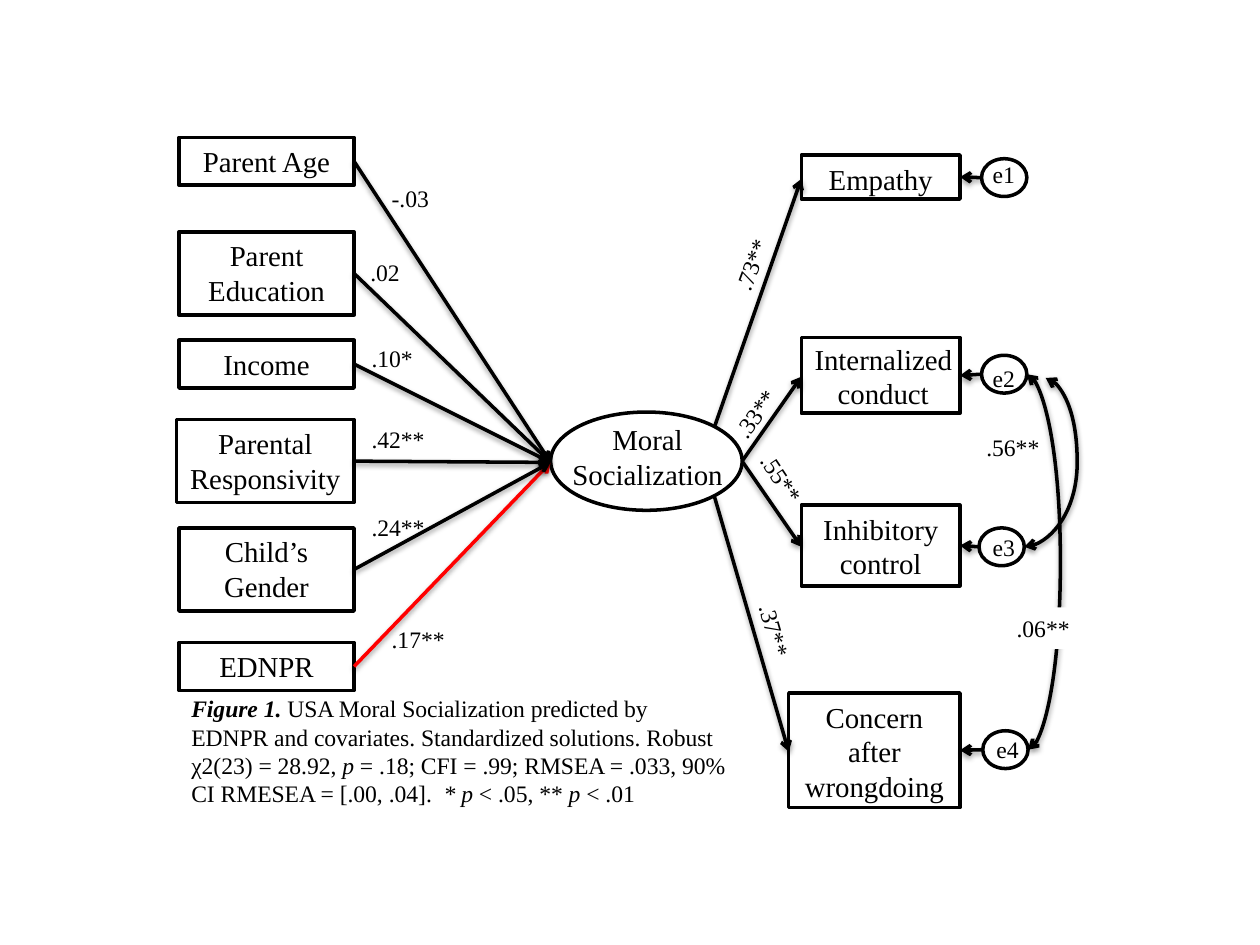
import pptx
import pptx.dml.color
import pptx.enum.shapes
import pptx.enum.text
import pptx.oxml
import pptx.oxml.ns
import pptx.util

# The slide is a grid of 100 columns by 75 rows
COLUMNS, ROWS = 100, 75
FONT = "Times New Roman"
INK, PAPER, ACCENT = "000000", "FFFFFF", "FF0000"
NODE_SIZE, LABEL_SIZE = 16.5, 13.5
LABEL_ROWS = 3.3

SHAPES = pptx.enum.shapes.MSO_SHAPE
LINES = pptx.enum.shapes.MSO_CONNECTOR
CENTER = pptx.enum.text.PP_ALIGN.CENTER
LEFT = pptx.enum.text.PP_ALIGN.LEFT

deck = pptx.Presentation()
deck.slide_width = pptx.util.Inches(10)
deck.slide_height = pptx.util.Inches(7.5)
slide = deck.slides.add_slide(deck.slide_layouts[6])


def color(hex_value):
    return pptx.dml.color.RGBColor.from_string(hex_value)


def place(*grid):
    """Turn column, row, column, row ... into slide lengths."""
    cells = deck.slide_width / COLUMNS, deck.slide_height / ROWS
    return [round(value * cells[i % 2]) for i, value in enumerate(grid)]


def write(shape, runs, align):
    """Fill a shape with (text, size, bold, italic) runs."""
    frame = shape.text_frame
    frame.word_wrap = True
    frame.auto_size = pptx.enum.text.MSO_AUTO_SIZE.SHAPE_TO_FIT_TEXT
    frame.vertical_anchor = pptx.enum.text.MSO_ANCHOR.TOP
    paragraph = frame.paragraphs[0]
    paragraph.alignment = align
    for text, size, bold, italic in runs:
        run = paragraph.add_run()
        run.text = text
        run.font.name = FONT
        run.font.size = pptx.util.Pt(size)
        run.font.bold, run.font.italic = bold, italic
        run.font.color.rgb = color(INK)


def outline(kind, box, outlined=True):
    shape = slide.shapes.add_shape(kind, *place(*box))
    shape.shadow.inherit = False
    shape.fill.solid()
    shape.fill.fore_color.rgb = color(PAPER)
    if outlined:
        shape.line.color.rgb = color(INK)
        shape.line.width = pptx.util.Pt(2)
    else:
        shape.line.fill.background()
    return shape


def words(box, text, size=LABEL_SIZE, align=LEFT):
    write(slide.shapes.add_textbox(*place(*box)), [(text, size, False, False)], align)


def patch(box, text, turn=0):
    """A coefficient on a white ground, turned along its path."""
    label = outline(SHAPES.RECTANGLE, box, outlined=False)
    label.rotation = turn
    write(label, [(text, LABEL_SIZE, False, False)], LEFT)


def arrow(start, end, hex_value=INK, bulge=None):
    """A straight arrow, or a two-headed curve reaching out to column bulge."""
    kind = LINES.STRAIGHT if bulge is None else LINES.CURVE
    path = slide.shapes.add_connector(kind, *place(*start, *end))
    path.line.color.rgb = color(hex_value)
    path.line.width = pptx.util.Pt(2)
    heads = ["tailEnd"]
    if bulge is not None:
        heads = ["headEnd", "tailEnd"]
        reach = round((bulge - start[0]) / (end[0] - start[0]) * 100000)
        guides = path._element.spPr.prstGeom.get_or_add_avLst()
        guide = pptx.oxml.parse_xml(f'<a:gd {pptx.oxml.ns.nsdecls("a")} name="adj1" fmla="val {reach}"/>')
        guides.append(guide)
    for head in heads:
        path.line._get_or_add_ln().append(
            pptx.oxml.parse_xml(f'<a:{head} {pptx.oxml.ns.nsdecls("a")} type="arrow"/>'))
    path._element.spPr.append(pptx.oxml.parse_xml(
        f'<a:effectLst {pptx.oxml.ns.nsdecls("a")}>'
        '<a:outerShdw blurRad="39370" dist="20320" dir="5400000" rotWithShape="0">'
        f'<a:srgbClr val="{INK}"><a:alpha val="38000"/></a:srgbClr>'
        '</a:outerShdw></a:effectLst>'))


def draw_outcomes(box, latent):
    """Outcome boxes right-aligned in box, with loadings and error terms."""
    left, top, width, _ = box
    right = left + width
    x, y, w, h = latent
    # Loading: text, column, row, width, turn
    for text, column, row, span, turn in [
            (".37**", -5.3, 36.2, 6.4, 74), (".55**", -4.8, 24.3, 6.8, 56.3),
            (".33**", -6.8, 18.8, 6.4, 305.3), (".73**", -7.1, 7, 6.3, 290.3)]:
        patch((left + column, top + row, span, LABEL_ROWS), text, turn)

    # Name, row, height, extra width, text row, text width and height,
    # start of loading, error column, row and text offset
    upper, side, lower = (x + 13, y + 1.2), (x + w, y + h / 2), (x + 13, y + 6.7)
    outcomes = [
        ("Empathy", 0, 3.5, 0, 0, 12.6, 3.8, upper, 1.7, 0.3, (-0.1, -0.4)),
        ("Internalized conduct", 14.5, 6, 0, 14.3, 13, 6.6, side, 1.7, 15.9, (-0.1, 0.2)),
        ("Inhibitory control", 27.8, 6.4, 0, 27.8, 12.6, 6.6, side, 1.5, 29.6, (0.1, -0.1)),
        ("Concern after wrongdoing", 42.7, 9.1, 1, 42.7, 13.6, 9.3, lower, 1.8, 45.7, (0.1, -0.2))]
    for number, (name, row, height, extra, text_row, text_w, text_h,
                 start, gap, error_row, shift) in enumerate(outcomes, 1):
        edge = left - extra
        outline(SHAPES.RECTANGLE, (edge, top + row, width + extra, height))
        words((edge, top + text_row, text_w, text_h), name, NODE_SIZE, CENTER)
        arrow(start, (edge, top + text_row + text_h / 2))
        error = right + gap, top + error_row
        outline(SHAPES.OVAL, (*error, 3.6, 3))
        words((error[0] + shift[0], error[1] + shift[1], 5.3, LABEL_ROWS), f"e{number}")
        arrow((error[0], error[1] + 1.5), (right, top + row + height / 2))

    # Error covariances
    arrow((right + 5.3, top + 17.4), (right + 5.4, top + 47.2), bulge=right + 8)
    arrow((right + 6.8, top + 17.7), (right + 5.1, top + 31.1), bulge=right + 9.3)
    words((right + 1.1, top + 21.6, 6.8, LABEL_ROWS), ".56**")
    patch((right + 3.5, top + 35.9, 6.9, LABEL_ROWS), ".06**")


def draw_latent(box):
    left, top, _, _ = box
    outline(SHAPES.OVAL, box)
    name = slide.shapes.add_textbox(*place(left + 0.4, top + 0.3, 14.6, 6.6))
    write(name, [("Moral", NODE_SIZE, False, False), (" ", LABEL_SIZE, False, False),
                 ("Socialization", NODE_SIZE, False, False)], CENTER)


def draw_predictors(box, target):
    """Predictor boxes down the box, each with an arrow to the target."""
    left, top, width, _ = box
    right = left + width
    # Name, row, height, extra width, coefficient, its gap and row, arrow color
    predictors = [
        ("EDNPR", 40.1, 3.8, 0, ".17**", 2, 38.2, ACCENT),
        ("Child’s Gender", 31, 6.6, 0, ".24**", 0.4, 29.3, INK),
        ("Parental Responsivity", 22.4, 6.6, 0.2, ".42**", 0.4, 22.3, INK),
        ("Income", 16.1, 3.8, 0, ".10*", 0.4, 15.9, INK),
        ("Parent Education", 7.5, 6.6, 0, ".02", 0.3, 9.1, INK),
        ("Parent Age", 0, 3.8, 0, "-.03", 2, 3.2, INK)]
    for name, row, height, extra, effect, gap, effect_row, hex_value in predictors:
        node = outline(SHAPES.RECTANGLE, (left - extra, top + row, width + extra, height))
        write(node, [(name, NODE_SIZE, False, False)], CENTER)
        arrow((right, top + row + height / 2), target, hex_value)
        words((right + gap, top + effect_row, 6.5, LABEL_ROWS), effect)


def draw_caption(box):
    runs = [
        ("Figure 1. ", True, True),
        ("USA Moral Socialization predicted by EDNPR and covariates. Standardized "
         "solutions. Robust χ2(23) = 28.92, ", False, False),
        ("p", False, True),
        (" = .18; CFI = .99; RMSEA = .033, 90% CI RMESEA = [.00, .04].  ", False, False),
        ("* p", False, True), (" < .05, ** ", False, False),
        ("p", False, True), (" < .01", False, False)]
    caption = slide.shapes.add_textbox(*place(*box))
    write(caption, [(text, LABEL_SIZE, bold, italic) for text, bold, italic in runs], LEFT)


latent_box = (43.7, 32.7, 15.2, 7.8)
draw_outcomes((63.6, 12.3, 12.6, 51.8), latent_box)
draw_latent(latent_box)
draw_predictors((14.2, 10.9, 13.9, 43.9), (43.7, 36.7))
draw_caption((14.2, 54.6, 44.7, 10.1))
deck.save("out.pptx")
